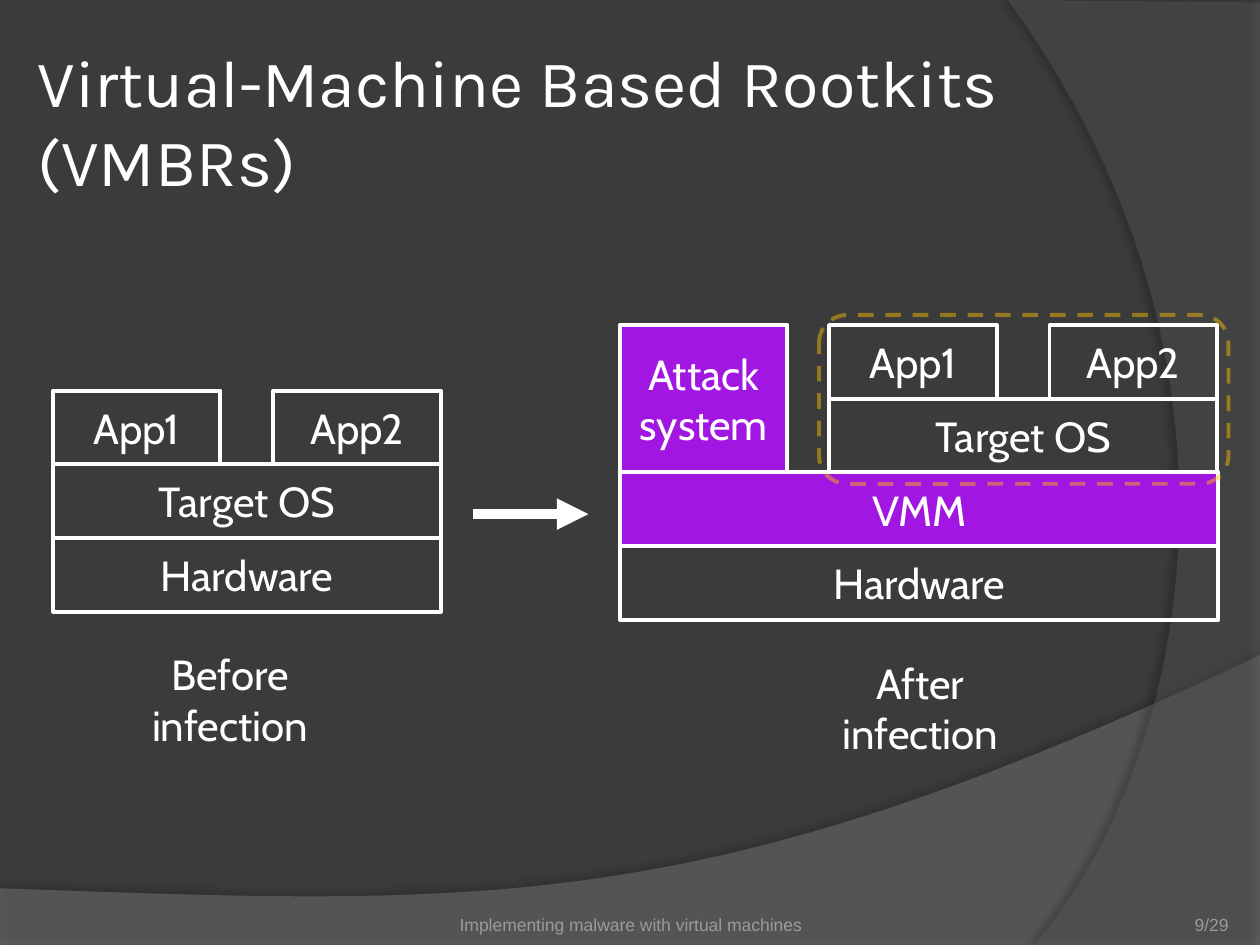
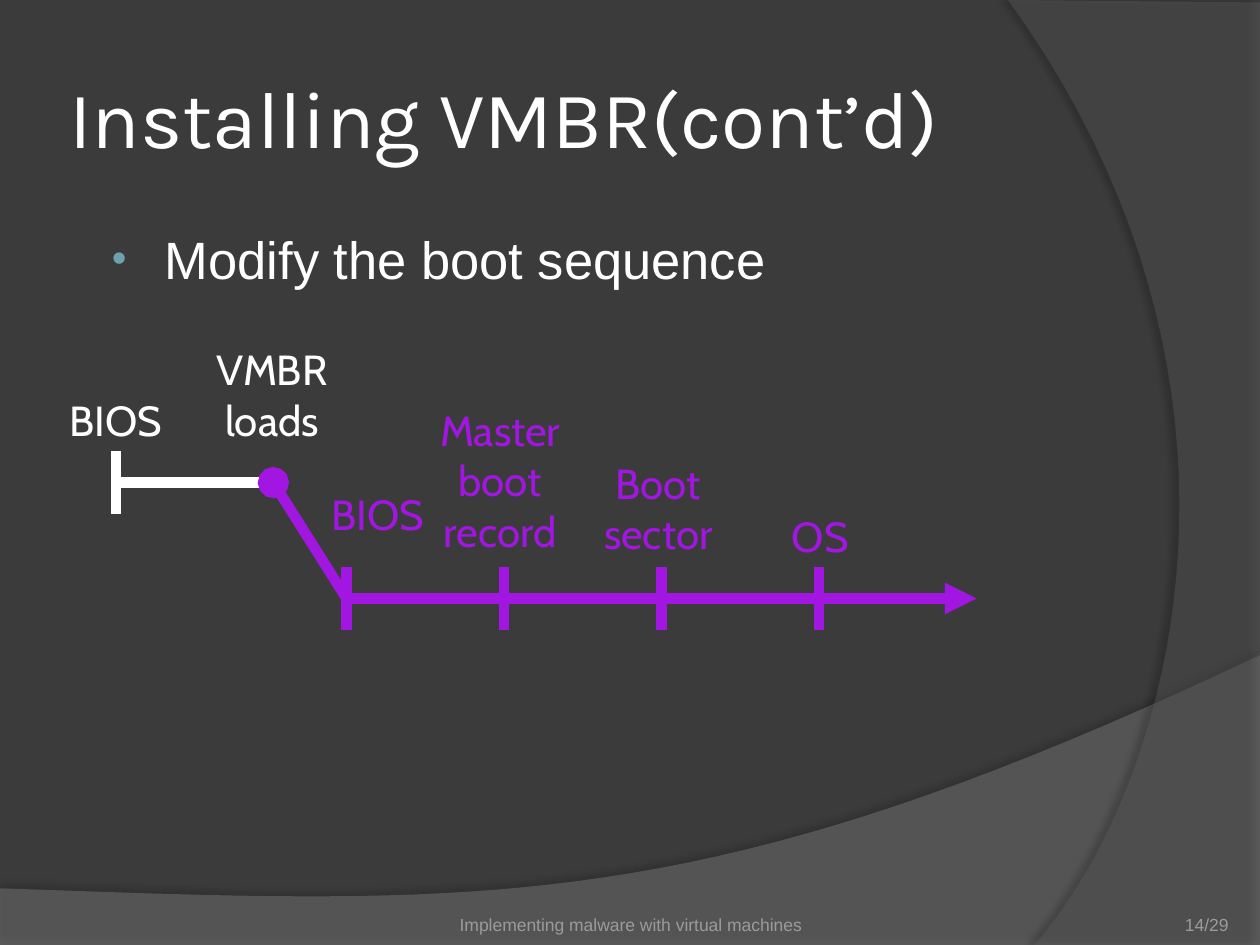
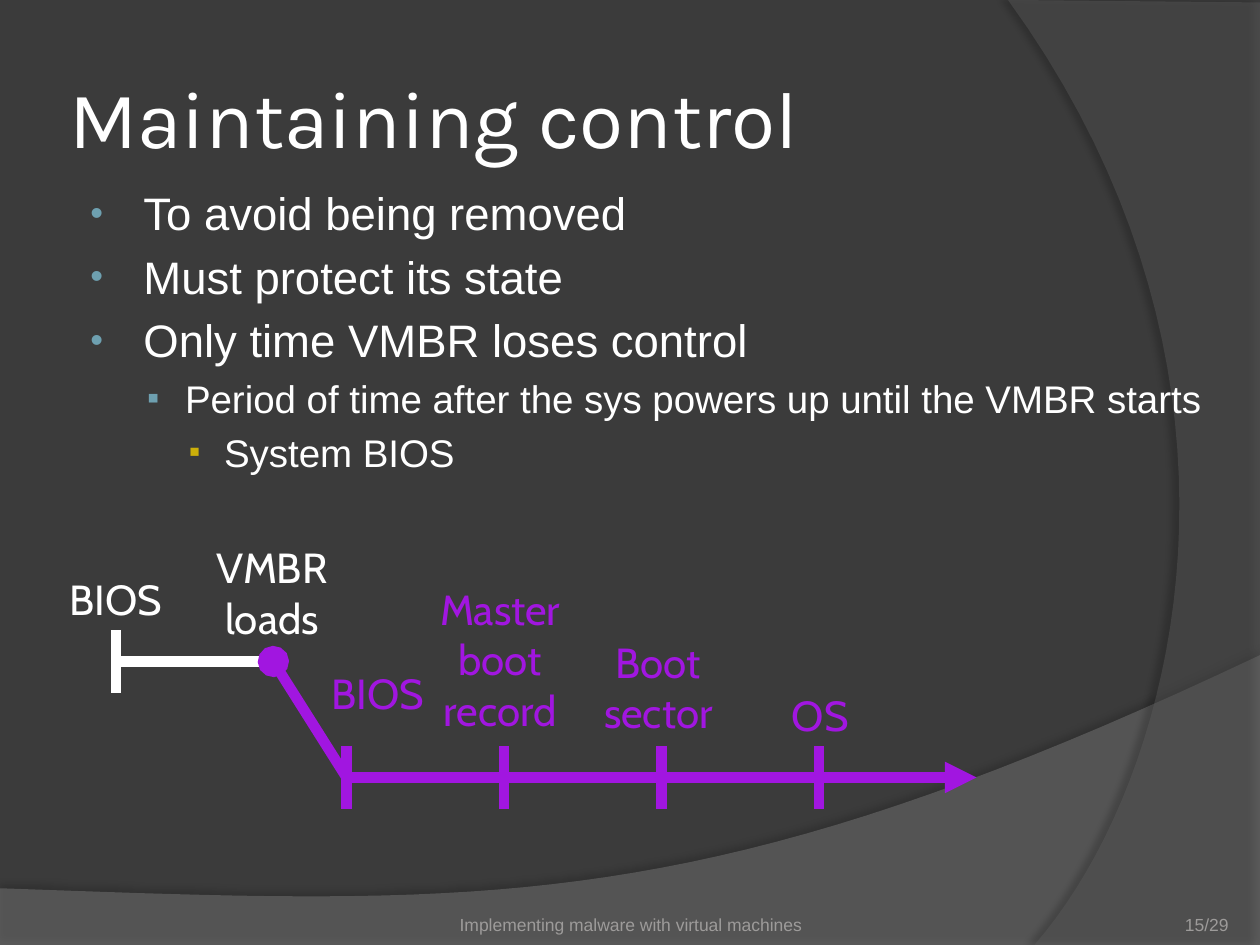
from lxml.etree import SubElement
from pptx import Presentation
from pptx.dml.color import RGBColor
from pptx.enum.dml import MSO_LINE
from pptx.enum.shapes import MSO_CONNECTOR, MSO_SHAPE
from pptx.enum.text import MSO_ANCHOR, MSO_AUTO_SIZE, PP_ALIGN
from pptx.oxml.ns import qn
from pptx.util import Inches, Pt

color = RGBColor.from_string
WHITE, PURPLE, GOLD, GRAY = "FFFFFF", "A116E0", "FFC000", "9D9B9A"
FOOTER = "Implementing malware with virtual machines"


def write_text(box, lines, size, font, ink, align=PP_ALIGN.CENTER,
               anchor=MSO_ANCHOR.TOP, wrap=True, inset=None):
    frame = box.text_frame
    frame.word_wrap = wrap
    frame.vertical_anchor = anchor
    if inset is not None:
        frame.margin_left = frame.margin_right = Inches(inset)
        frame.margin_top = frame.margin_bottom = Inches(inset)
    for index, line in enumerate(lines):
        para = frame.add_paragraph() if index else frame.paragraphs[0]
        para.alignment = align
        span = para.add_run()
        span.text = line
        span.font.size = Pt(size)
        span.font.name = font
        span.font.color.rgb = color(ink)


def draw_line(page, start, end, ink, ending=None, kind=None):
    line = page.shapes.add_connector(
        MSO_CONNECTOR.STRAIGHT, *map(Inches, start + end))
    line.line.color.rgb = color(ink)
    line.line.width = Pt(6)
    properties = line.element.spPr
    if ending:
        SubElement(properties.find(qn("a:ln")), qn(ending), type=kind)
    SubElement(properties, qn("a:effectLst"))


deck = Presentation()
deck.slide_width, deck.slide_height = Inches(10), Inches(7.5)
background = deck.slide_master.background.fill
background.solid()
background.fore_color.rgb = color("3B3B3B")

bands = [
    ([(0, 7.5), (10, 7.5)],
     [(10, 5.2), (5.59, 7.29), (3.91, 7.19), (0, 7.05)],
     "7F7F7F", 45, 35, 3.5, 270),
    ([(10, 0.02), (10, 7.5)],
     [(8.21, 7.5), (9.35, 6.19), (10.18, 3), (8, 0)],
     "5E5E5E", 40, 45, 4, 180),
]
titles = [
    ("Virtual-Machine Based Rootkits (VMBRs)", 38, (0.25, 0.33, 9.33, 1.25), 9),
    ("Installing VMBR(cont’d)", 46, (0.5, 0.3, 8.17, 1.25), 14),
    ("Maintaining control", 46, (0.5, 0.3, 8.17, 1.25), 15),
]
pages = []
for title, title_size, place, number in titles:
    page = deck.slides.add_slide(deck.slide_layouts[6])
    pages.append(page)
    for edge, curve, fill, opacity, shade, distance, direction in bands:
        points = list(edge)
        for step in range(41):
            t = step / 40
            weights = ((1 - t) ** 3, 3 * t * (1 - t) ** 2, 3 * t ** 2 * (1 - t), t ** 3)
            points.append(tuple(
                sum(weight * point[axis] for weight, point in zip(weights, curve))
                for axis in (0, 1)))
        points = [(Inches(x), Inches(y)) for x, y in points]
        outline = page.shapes.build_freeform(*points[0])
        outline.add_line_segments(points[1:], close=True)
        band = outline.convert_to_shape()
        band.fill.solid()
        band.fill.fore_color.rgb = color(fill)
        band.line.fill.background()
        band.shadow.inherit = False
        properties = band.element.spPr
        SubElement(properties.find(qn("a:solidFill"))[0], qn("a:alpha"),
                   val=str(opacity * 1000))
        shadow = SubElement(
            properties.find(qn("a:effectLst")), qn("a:outerShdw"),
            blurRad=str(Pt(4)), dist=str(Pt(distance)), dir=str(direction * 60000))
        shadow_color = SubElement(shadow, qn("a:srgbClr"), val="000000")
        SubElement(shadow_color, qn("a:alpha"), val=str(shade * 1000))

    box = page.shapes.add_textbox(*map(Inches, place))
    write_text(box, [title], title_size, "Karla", WHITE, PP_ALIGN.LEFT,
               MSO_ANCHOR.MIDDLE, inset=0.05)
    for text, left, width, align in (
            (FOOTER, 3.42, 3.17, PP_ALIGN.CENTER),
            (f"{number}/29", 8.92, 0.83, PP_ALIGN.RIGHT)):
        box = page.shapes.add_textbox(*map(Inches, (left, 7.02, width, 0.4)))
        write_text(box, [text], 10, "Arial", GRAY, align, MSO_ANCHOR.BOTTOM, inset=0)

rootkits, installing, control = pages

ROW = 0.585
layers = []
for left, top in ((0.42, 3.1), (6.58, 2.58)):
    layers += [
        (["App1"], left, top, 1.33, ROW, None),
        (["App2"], left + 1.75, top, 1.33, ROW, None),
        (["Target OS"], left, top + ROW, 3.08, ROW, None),
    ]
layers += [
    (["Hardware"], 0.42, 3.1 + 2 * ROW, 3.08, ROW, None),
    (["Hardware"], 4.92, 2.58 + 3 * ROW, 4.75, ROW, None),
    (["VMM"], 4.92, 2.58 + 2 * ROW, 4.75, ROW, PURPLE),
    (["Attack", "system"], 4.92, 2.58, 1.33, 2 * ROW, PURPLE),
]
for lines, left, top, width, height, fill in layers:
    layer = rootkits.shapes.add_shape(
        MSO_SHAPE.RECTANGLE, *map(Inches, (left, top, width, height)))
    layer.shadow.inherit = False
    if fill:
        layer.fill.solid()
        layer.fill.fore_color.rgb = color(fill)
    else:
        layer.fill.background()
    layer.line.color.rgb = color(WHITE)
    layer.line.width = Pt(2.25)
    write_text(layer, lines, 24, "Cabin", WHITE, anchor=MSO_ANCHOR.MIDDLE, wrap=False)

draw_line(rootkits, (3.75, 4.08), (4.67, 4.08), WHITE, "a:tailEnd", "triangle")

target = rootkits.shapes.add_shape(
    MSO_SHAPE.ROUNDED_RECTANGLE, *map(Inches, (6.5, 2.5, 3.25, 1.34)))
target.shadow.inherit = False
target.fill.background()
target.line.color.rgb = color(GOLD)
target.line.width = Pt(2.25)
target.line.dash_style = MSO_LINE.DASH
target_color = next(target.element.spPr.find(qn("a:ln")).iter(qn("a:srgbClr")))
SubElement(target_color, qn("a:alpha"), val="45000")

bullet_styles = [
    (0.46, -0.42, "•", "6EA0B0", 80),
    (0.79, -0.3, "▪", "6EA0B0", 90),
    (1.1, -0.28, "▪", "CCAF0A", 85),
]
bullet_lists = [
    (installing, (0.75, 1.75, 8.5, 0.92), [("Modify the boot sequence", 0, 30)]),
    (control, (0.58, 1.42, 9.42, 2.92), [
        ("To avoid being removed", 0, 26),
        ("Must protect its state", 0, 26),
        ("Only time VMBR loses control", 0, 26),
        ("Period of time after the sys powers up until the VMBR starts", 1, 22),
        ("System BIOS", 2, 22),
    ]),
]
for page, place, items in bullet_lists:
    box = page.shapes.add_textbox(*map(Inches, place))
    write_text(box, [text for text, level, size in items], 26, "Arial", WHITE,
               PP_ALIGN.LEFT)
    for para, (text, level, size) in zip(box.text_frame.paragraphs, items):
        margin, indent, symbol, ink, percent = bullet_styles[level]
        para.level = level
        para.runs[0].font.size = Pt(size)
        properties = para._p.get_or_add_pPr()
        properties.set("marL", str(Inches(margin)))
        properties.set("indent", str(Inches(indent)))
        spacing = SubElement(properties, qn("a:spcBef"))
        SubElement(spacing, qn("a:spcPct"), val="20000")
        bullet_color = SubElement(properties, qn("a:buClr"))
        SubElement(bullet_color, qn("a:srgbClr"), val=ink)
        SubElement(properties, qn("a:buSzPct"), val=str(percent * 1000))
        SubElement(properties, qn("a:buFont"), typeface="Arial")
        SubElement(properties, qn("a:buChar"), char=symbol)

labels = [
    (rootkits, ["Before", "infection"], 1.1, 5.1, 1.45, WHITE, False),
    (rootkits, ["After", "infection"], 6.58, 5.17, 1.45, WHITE, False),
    (installing, ["VMBR", "loads"], 1.58, 2.68, 1.16, WHITE, False),
    (control, ["VMBR", "loads"], 1.58, 4.25, 1.16, WHITE, True),
]
stops = [2.75, 4, 5.25, 6.5, 7.75]
for page, top in ((installing, 3.58), (control, 5)):
    middle, lower = top + 0.25, top + 1.17
    draw_line(page, (0.92, top), (0.92, top + 0.5), WHITE)
    draw_line(page, (0.92, middle), (2.17, middle), WHITE)
    draw_line(page, (2.17, middle), (stops[0], lower), PURPLE, "a:headEnd", "oval")
    for start, end in zip(stops, stops[1:]):
        ending = "a:tailEnd" if end == stops[-1] else None
        draw_line(page, (start, lower), (end, lower), PURPLE, ending, "triangle")
        draw_line(page, (start, lower - 0.25), (start, lower + 0.25), PURPLE)
    labels += [
        (page, ["BIOS"], 0.42, top - 0.5, 1, WHITE, False),
        (page, ["BIOS"], 2.5, top + 0.25, 1, PURPLE, False),
        (page, ["Master", "boot", "record"], 3.36, top - 0.42, 1.22, PURPLE, False),
        (page, ["Boot", "sector"], 4.67, top, 1.11, PURPLE, False),
        (page, ["OS"], 6.17, top + 0.42, 0.68, PURPLE, False),
    ]

for page, lines, left, top, width, ink, wrap in labels:
    height = 0.1 + 0.4 * len(lines)
    box = page.shapes.add_textbox(*map(Inches, (left, top, width, height)))
    write_text(box, lines, 24, "Cabin", ink, wrap=wrap)
    box.text_frame.auto_size = MSO_AUTO_SIZE.SHAPE_TO_FIT_TEXT

deck.save("out.pptx")
